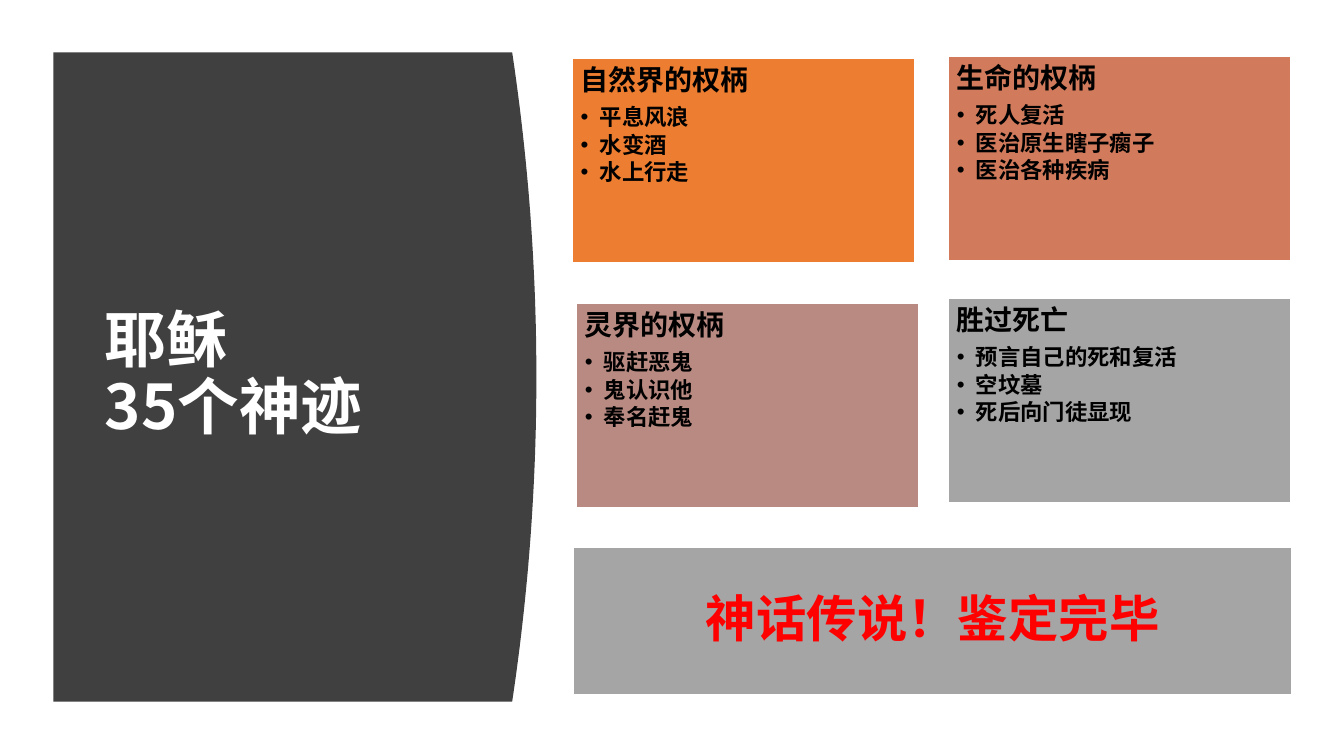
from math import sqrt

from lxml.etree import SubElement
from pptx import Presentation
from pptx.dml.color import RGBColor
from pptx.enum.shapes import MSO_SHAPE
from pptx.enum.text import MSO_ANCHOR, PP_ALIGN
from pptx.oxml.ns import qn
from pptx.util import Inches, Pt

FONT = "Noto Sans CJK SC"
WHITE = RGBColor(0xFF, 0xFF, 0xFF)
BLACK = RGBColor(0, 0, 0)
RED = RGBColor(0xFF, 0, 0)
CHARCOAL = RGBColor(0x40, 0x40, 0x40)
ORANGE = RGBColor(0xED, 0x7D, 0x31)
TERRACOTTA = RGBColor(0xD1, 0x7B, 0x5C)
ROSE = RGBColor(0xB9, 0x8A, 0x82)
GRAY = RGBColor(0xA5, 0xA5, 0xA5)

HEADLINE = "耶稣\v35个神迹"
VERDICT = "神话传说！鉴定完毕"
POWERS = [
    ("自然界的权柄", ["平息风浪", "水变酒", "水上行走"], ORANGE, (5.68, 0.58)),
    ("生命的权柄", ["死人复活", "医治原生瞎子瘸子", "医治各种疾病"], TERRACOTTA, (9.41, 0.56)),
    ("灵界的权柄", ["驱赶恶鬼", "鬼认识他", "奉名赶鬼"], ROSE, (5.72, 3.01)),
    ("胜过死亡", ["预言自己的死和复活", "空坟墓", "死后向门徒显现"], GRAY, (9.41, 2.96)),
]
CARD_SIZE = (3.39, 2.03)
VERDICT_BOX = (5.69, 5.43, 7.12, 1.46)
TITLE_BOX = (0.94, 1.11, 3.74, 5.24)
PANEL_LEFT, PANEL_TOP, PANEL_BOTTOM = 0.53, 0.52, 6.96
PANEL_EDGE, PANEL_BULGE = 5.08, 0.24
CURVE_STEPS = 48


def apply(target, values):
    for attribute, value in values.items():
        setattr(target, attribute, value)


def write(paragraph, text, size, color, **layout):
    apply(paragraph, {"line_spacing": 0.9, **layout})
    paragraph.text = text
    for run in paragraph.runs:
        apply(run.font, {"name": FONT, "size": Pt(size), "bold": True})
        run.font.color.rgb = color
        SubElement(run.font._element, qn("a:ea"), typeface=FONT)


def add_bullet(paragraph):
    properties = paragraph._p.get_or_add_pPr()
    properties.set("marL", str(Inches(0.19)))
    properties.set("indent", str(Inches(-0.19)))
    SubElement(properties, qn("a:buFont"), typeface="Arial")
    SubElement(properties, qn("a:buChar"), char="•")


def add_box(shapes, box, color, inset, anchor):
    card = shapes.add_shape(MSO_SHAPE.RECTANGLE, *map(Inches, box))
    card.shadow.inherit = False
    card.fill.solid()
    card.fill.fore_color.rgb = color
    card.line.color.rgb = WHITE
    card.line.width = Pt(1)
    margins = {f"margin_{side}": Inches(inset) for side in ("left", "top", "right", "bottom")}
    apply(card.text_frame, {"word_wrap": True, "vertical_anchor": anchor, **margins})
    return card.text_frame


def panel_outline():
    half = (PANEL_BOTTOM - PANEL_TOP) / 2
    radius = (half ** 2 + PANEL_BULGE ** 2) / (2 * PANEL_BULGE)
    yield PANEL_EDGE, PANEL_TOP
    for step in range(1, CURVE_STEPS + 1):
        offset = half * (2 * step / CURVE_STEPS - 1)
        reach = sqrt(radius ** 2 - offset ** 2) - radius + PANEL_BULGE
        yield PANEL_EDGE + reach, PANEL_TOP + half + offset
    yield PANEL_LEFT, PANEL_BOTTOM


def add_panel(shapes):
    builder = shapes.build_freeform(Inches(PANEL_LEFT), Inches(PANEL_TOP))
    builder.add_line_segments([(Inches(x), Inches(y)) for x, y in panel_outline()])
    panel = builder.convert_to_shape()
    panel.shadow.inherit = False
    panel.fill.solid()
    panel.fill.fore_color.rgb = CHARCOAL
    panel.line.fill.background()


def add_title(shapes):
    title = shapes.title
    apply(title, dict(zip(("left", "top", "width", "height"), map(Inches, TITLE_BOX))))
    apply(title.text_frame, {"word_wrap": True, "vertical_anchor": MSO_ANCHOR.MIDDLE})
    write(title.text_frame.paragraphs[0], HEADLINE, 44, WHITE, alignment=PP_ALIGN.LEFT)
    shapes._spTree.append(title._element)


def add_power(shapes, heading, miracles, color, corner):
    frame = add_box(shapes, corner + CARD_SIZE, color, 0.08, MSO_ANCHOR.TOP)
    write(frame.paragraphs[0], heading, 20, BLACK, alignment=PP_ALIGN.LEFT, space_after=Pt(7))
    for miracle in miracles:
        item = frame.add_paragraph()
        write(item, miracle, 16, BLACK, alignment=PP_ALIGN.LEFT, level=1, space_after=Pt(2.4))
        add_bullet(item)


def main():
    deck = Presentation()
    apply(deck, {"slide_width": Inches(13.33), "slide_height": Inches(7.5)})
    shapes = deck.slides.add_slide(deck.slide_layouts[5]).shapes
    add_panel(shapes)
    add_title(shapes)
    for power in POWERS:
        add_power(shapes, *power)
    verdict = add_box(shapes, VERDICT_BOX, GRAY, 0.1, MSO_ANCHOR.MIDDLE)
    write(verdict.paragraphs[0], VERDICT, 36, RED, alignment=PP_ALIGN.CENTER, space_after=Pt(12.6))
    deck.save("out.pptx")


if __name__ == "__main__":
    main()
